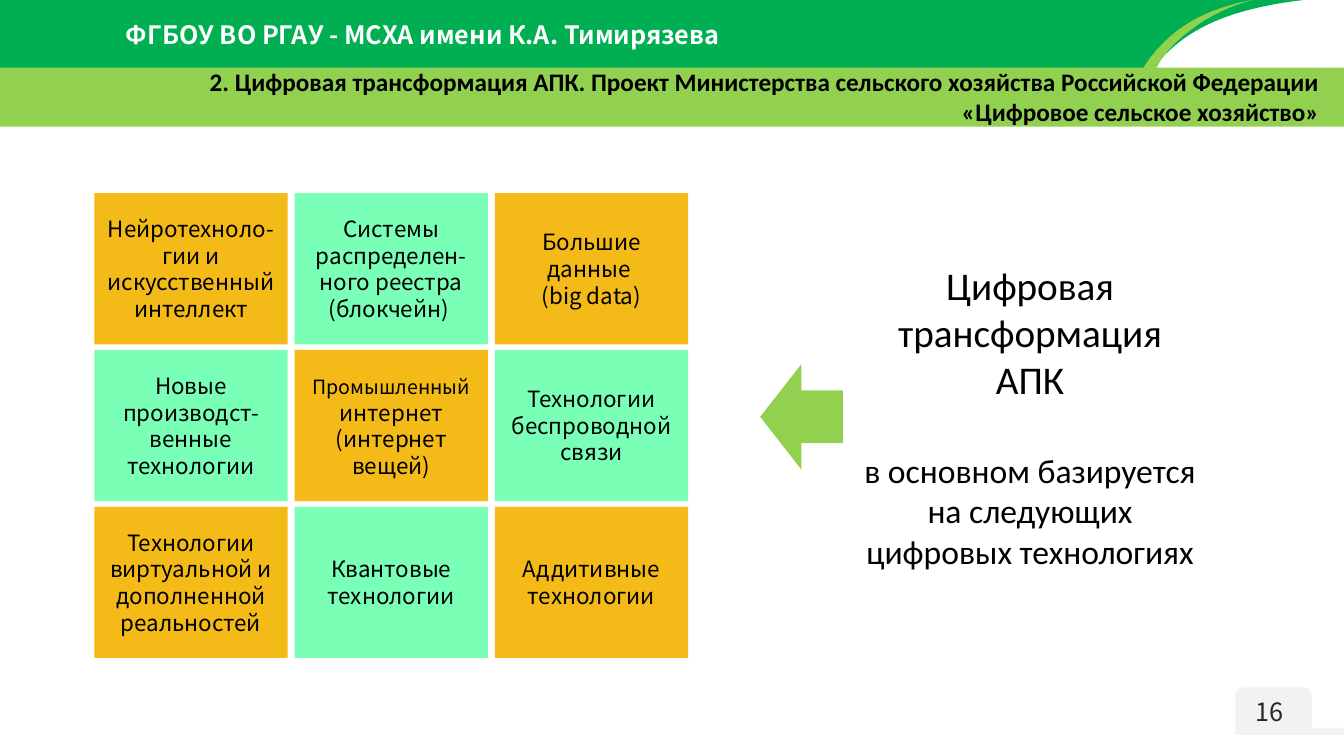
from pptx import Presentation
from pptx.dml.color import RGBColor
from pptx.enum.shapes import MSO_SHAPE
from pptx.enum.text import MSO_ANCHOR, PP_ALIGN
from pptx.util import Pt

RECTANGLE = MSO_SHAPE.RECTANGLE
ROUNDED = MSO_SHAPE.ROUNDED_RECTANGLE
LEFT_ARROW = MSO_SHAPE.LEFT_ARROW
TOP, MIDDLE = MSO_ANCHOR.TOP, MSO_ANCHOR.MIDDLE
CENTER, RIGHT = PP_ALIGN.CENTER, PP_ALIGN.RIGHT

COLORS = {
    "green": "00AF52",
    "lime": "92D050",
    "amber": "F4BA18",
    "mint": "79FFB6",
    "gray": "F2F2F2",
    "dark": "262626",
    "black": "000000",
    "white": "FFFFFF",
}
SANS = "Noto Sans CJK SC"
CALIBRI = "Calibri"
UNITS = 100  # freeform units per point
CURVE_STEPS = 16

# Each tile is a list of paragraphs, each paragraph a list of (text, size)
TILES = [
    [[("Нейротехноло-гии и искусственный интеллект", 16)]],
    [[("Системы распределен-ного реестра (блокчейн) ", 16)]],
    [[("Большие данные ", 16)], [("(big data)", 16)]],
    [[("Новые производст-венные технологии", 16)]],
    [[("Промышленный", 14), (" интернет (интернет вещей)", 16)]],
    [[("Технологии беспроводной связи", 16)]],
    [[("Технологии виртуальной и дополненной реальностей", 16)]],
    [[("Квантовые", 16)], [("технологии", 16)]],
    [[("Аддитивные технологии", 16)]],
]


def paint(shape, color):
    shape.shadow.inherit = False
    shape.fill.solid()
    shape.fill.fore_color.rgb = RGBColor.from_string(COLORS[color])
    shape.line.fill.background()


def add_block(page, kind, box, color):
    shape = page.shapes.add_shape(kind, *map(Pt, box))
    paint(shape, color)
    return shape


def write(shape, paragraphs, font, color, align=CENTER, anchor=TOP, bold=False):
    frame = shape.text_frame
    frame.word_wrap = True
    frame.vertical_anchor = anchor
    for index, spans in enumerate(paragraphs):
        para = frame.add_paragraph() if index else frame.paragraphs[0]
        para.alignment = align
        for text, size in spans:
            span = para.add_run()
            span.text = text
            span.font.name = font
            span.font.size = Pt(size)
            span.font.bold = bold
            span.font.color.rgb = RGBColor.from_string(COLORS[color])
    return frame


def add_label(page, box, paragraphs, font, color, **layout):
    label = page.shapes.add_textbox(*map(Pt, box))
    return write(label, paragraphs, font, color, **layout)


def curve(start, first, second, end):
    """Points along a cubic curve, without its start."""
    points = []
    for step in range(1, CURVE_STEPS + 1):
        t = step / CURVE_STEPS
        weights = ((1 - t) ** 3, 3 * t * (1 - t) ** 2, 3 * t * t * (1 - t), t ** 3)
        points.append(tuple(
            sum(weight * value for weight, value in zip(weights, axis))
            for axis in zip(start, first, second, end)))
    return points


def add_outline(page, points, color):
    scaled = [(round(x * UNITS), round(y * UNITS)) for x, y in points]
    builder = page.shapes.build_freeform(*scaled[0], scale=Pt(1) / UNITS)
    builder.add_line_segments(scaled[1:], close=True)
    paint(builder.convert_to_shape(), color)


def add_header(page, box):
    left, top, width, height = box
    right = left + width
    # Green banner with a curved right end
    tip, foot = (right - 24.5, top - 0.5), (right - 139, top + 52)
    add_outline(page, [
        (left, top), tip,
        *curve(tip, (right - 94.5, top + 7), (right - 120, top + 27.5), foot),
        (left, top + 52)], "green")
    # Lime swoosh along the curve
    start, peak, end = (right - 145.5, top + 52), (right - 63.5, top - 0.5), (right - 135, top + 51)
    add_outline(page, [
        start,
        *curve(start, (right - 126, top + 19), (right - 97.5, top + 6), peak),
        *curve(peak, (right - 99, top + 8), (right - 128, top + 33), end)], "lime")
    add_label(page, (left + 13.5, top + 10, 573, 29),
              [[(" ФГБОУ ВО РГАУ - МСХА имени К.А. Тимирязева", 18)]],
              SANS, "white", anchor=MIDDLE, bold=True)
    # Title band
    add_block(page, RECTANGLE, (left, top + 48.25, width, height - 48.25), "lime")
    add_label(page, (left + 54.5, top + 43.5, 895, 51),
              [[("2. Цифровая трансформация АПК. Проект Министерства сельского "
                 "хозяйства Российской Федерации «Цифровое сельское хозяйство»", 18)]],
              CALIBRI, "black", align=RIGHT, bold=True)


def add_tiles(page, box):
    left, top, width, height = box
    gap_x, gap_y = 5, 4
    tile_width, tile_height = (width - 2 * gap_x) / 3, (height - 2 * gap_y) / 3
    for index, paragraphs in enumerate(TILES):
        row, column = divmod(index, 3)
        tile = add_block(page, RECTANGLE,
                         (left + column * (tile_width + gap_x),
                          top + row * (tile_height + gap_y),
                          tile_width, tile_height),
                         "mint" if index % 2 else "amber")
        frame = write(tile, paragraphs, SANS, "black", anchor=MIDDLE)
        frame.margin_left = frame.margin_right = Pt(4.8)
        for para in frame.paragraphs:
            para.line_spacing = Pt(19)


def add_statement(page, box):
    left, top, width, height = box
    add_block(page, LEFT_ARROW, (left, top + 77, 59, 75.5), "lime")
    frame = add_label(page, (left + 65, top, width - 65, height),
                      [[("Цифровая трансформация АПК", 28)],
                       [("в основном базируется на следующих цифровых технологиях", 24)]],
                      CALIBRI, "black")
    frame.paragraphs[1].space_before = Pt(34)


def add_page_number(page, box):
    left, top, width, height = box
    add_block(page, ROUNDED, (left, top, 54.5, height), "gray")
    add_block(page, RECTANGLE, (left, top + height - 5, width, 5), "gray")
    add_label(page, (left, top + 3, 52.5, 29), [[("16 ", 18)]],
              SANS, "dark", anchor=MIDDLE)


def main():
    deck = Presentation()
    deck.slide_width, deck.slide_height = Pt(960), Pt(540)
    page = deck.slides.add_slide(deck.slide_layouts[6])
    add_page_number(page, (882.5, 491, 77.5, 34))
    add_header(page, (0, 0, 960, 90.5))
    add_tiles(page, (67.5, 138, 424, 332))
    add_statement(page, (543, 183, 320.5, 230.5))
    deck.save("out.pptx")


if __name__ == "__main__":
    main()
